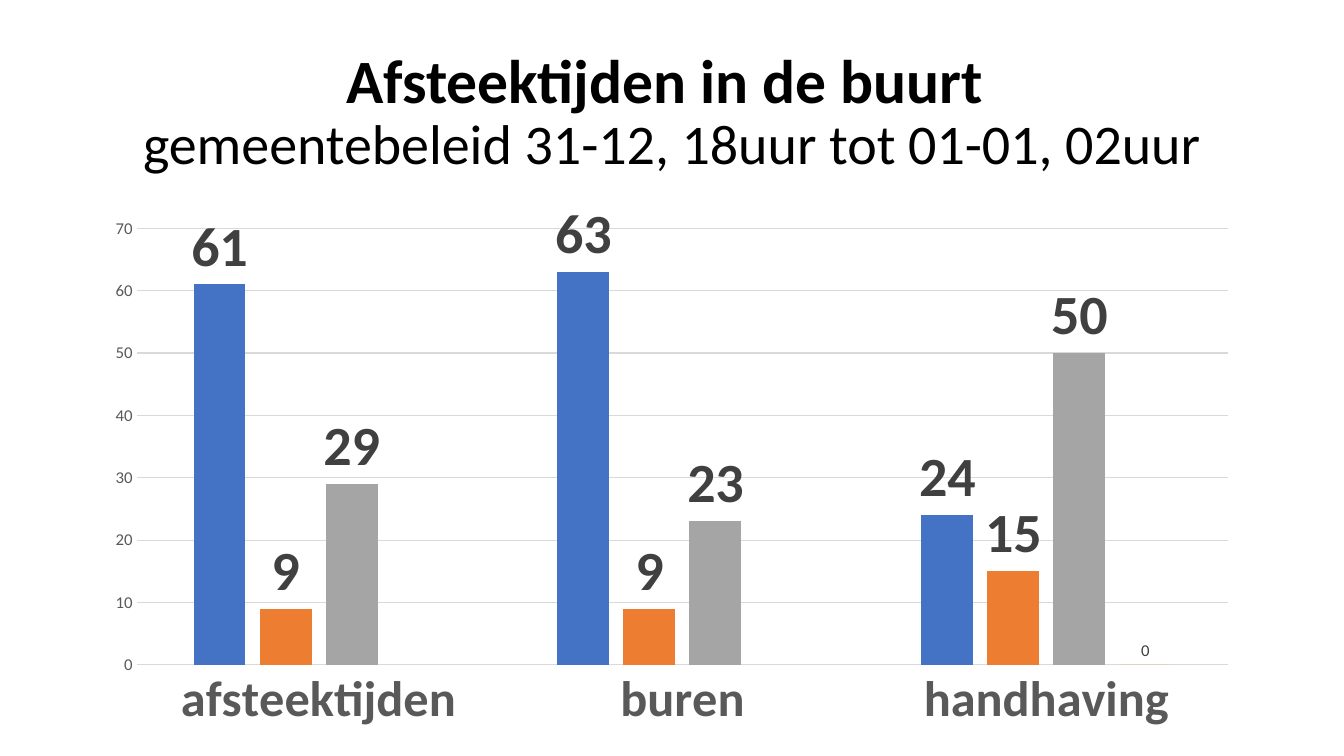
"""Build a slide with a clustered column chart on firework times."""
from pptx import Presentation
from pptx.chart.data import CategoryChartData
from pptx.dml.color import RGBColor
from pptx.enum.chart import XL_CHART_TYPE, XL_LABEL_POSITION, XL_TICK_MARK
from pptx.enum.text import MSO_ANCHOR, MSO_AUTO_SIZE, PP_ALIGN
from pptx.util import Pt

FONT = "Calibri"
COLORS = {
    "title": "000000",
    "axis": "595959",
    "label": "404040",
    "grid": "D9D9D9",
}
CATEGORIES = ["afsteektijden", "buren", "handhaving"]
SERIES = [
    ("Series 1", [61, 63, 24], "4472C4", 40, True),
    ("Series 2", [9, 9, 15], "ED7D31", 40, True),
    ("Series 3", [29, 23, 50], "A5A5A5", 40, True),
    ("Series 4", [None, None, 0], "FFC000", 12, False),
]


def style_font(font, size, color, bold=False):
    """Apply typeface, size, colour and weight to a font."""
    font.name = FONT
    font.size = Pt(size)
    font.bold = bold
    font.color.rgb = RGBColor.from_string(color)


def style_line(line):
    """Draw a thin line in the grid colour."""
    line.color.rgb = RGBColor.from_string(COLORS["grid"])
    line.width = Pt(0.75)


def fill_title(title, left, top, width, height):
    """Place the two-line title in the given box."""
    title.left, title.top = Pt(left), Pt(top)
    title.width, title.height = Pt(width), Pt(height)
    frame = title.text_frame
    frame.text = "Afsteektijden in de buurt \vgemeentebeleid 31-12, 18uur tot 01-01, 02uur"
    frame.word_wrap = True
    frame.auto_size = MSO_AUTO_SIZE.NONE
    frame.vertical_anchor = MSO_ANCHOR.MIDDLE
    paragraph = frame.paragraphs[0]
    paragraph.alignment = PP_ALIGN.CENTER
    paragraph.line_spacing = 0.9
    heading, subtitle = paragraph.runs
    style_font(heading.font, 44, COLORS["title"], True)
    style_font(subtitle.font, 40, COLORS["title"])


def style_axes(chart):
    """Format both axes and the gridlines."""
    category_axis, value_axis = chart.category_axis, chart.value_axis
    for axis, size, bold in ((category_axis, 36, True), (value_axis, 12, False)):
        axis.major_tick_mark = XL_TICK_MARK.NONE
        axis.minor_tick_mark = XL_TICK_MARK.NONE
        style_font(axis.tick_labels.font, size, COLORS["axis"], bold)
    style_line(category_axis.format.line)
    value_axis.format.line.fill.background()
    value_axis.minimum_scale, value_axis.maximum_scale = 0, 70
    value_axis.major_unit = 10
    value_axis.has_major_gridlines = True
    style_line(value_axis.major_gridlines.format.line)


def add_answer_chart(slide, left, top, width, height):
    """Place the column chart in the given box."""
    chart_data = CategoryChartData()
    chart_data.categories = CATEGORIES
    for name, values, *_ in SERIES:
        chart_data.add_series(name, values)
    chart = slide.shapes.add_chart(
        XL_CHART_TYPE.COLUMN_CLUSTERED,
        Pt(left), Pt(top), Pt(width), Pt(height), chart_data,
    ).chart
    chart.has_title = False
    chart.has_legend = False
    style_font(chart.font, 10, COLORS["title"])
    style_axes(chart)
    plot = chart.plots[0]
    plot.gap_width, plot.overlap = 219, -27
    plot.vary_by_categories = False
    for series, (_, _, color, size, bold) in zip(plot.series, SERIES):
        series.format.fill.solid()
        series.format.fill.fore_color.rgb = RGBColor.from_string(color)
        series.invert_if_negative = False
        labels = series.data_labels
        labels.show_value = True
        labels.position = XL_LABEL_POSITION.OUTSIDE_END
        style_font(labels.font, size, COLORS["label"], bold)


def main():
    """Create and save the presentation."""
    presentation = Presentation()
    presentation.slide_width, presentation.slide_height = Pt(960), Pt(540)
    slide = presentation.slides.add_slide(presentation.slide_layouts[5])
    fill_title(slide.shapes.title, 66, 28.75, 828, 104.4)
    add_answer_chart(slide, 66, 144, 828, 385)
    presentation.save("out.pptx")


if __name__ == "__main__":
    main()
